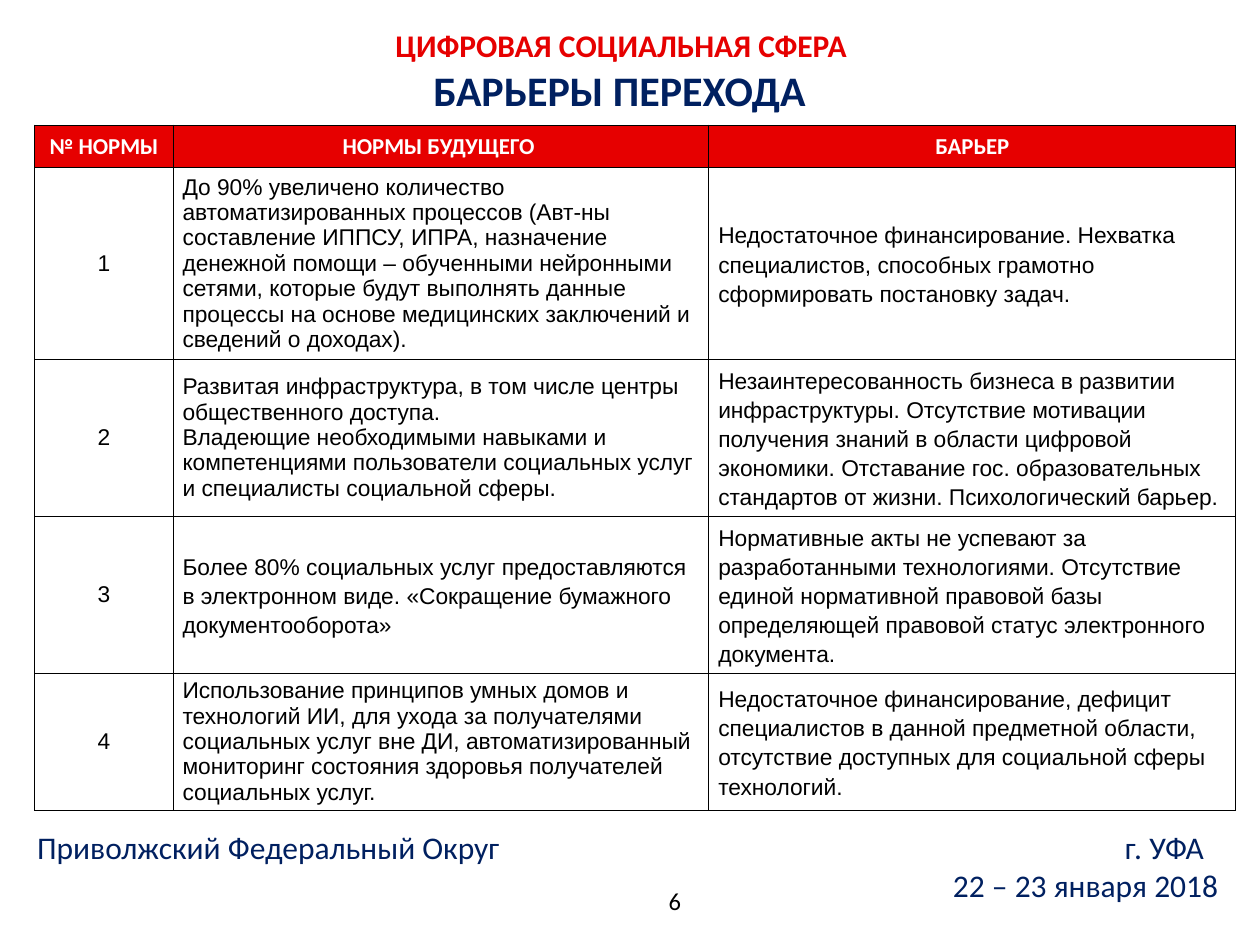
from pptx import Presentation
from pptx.dml.color import RGBColor
from pptx.enum import text
from pptx.oxml import parse_xml
from pptx.oxml.ns import nsdecls
from pptx.util import Cm, Pt

COLORS = {"navy": "002060", "red": "E60000", "white": "FFFFFF", "black": "000000"}
LEFT, CENTER, RIGHT = text.PP_ALIGN.LEFT, text.PP_ALIGN.CENTER, text.PP_ALIGN.RIGHT
MIDDLE, TOP = text.MSO_ANCHOR.MIDDLE, text.MSO_ANCHOR.TOP

HEADERS = ["№ НОРМЫ", "НОРМЫ БУДУЩЕГО ", "БАРЬЕР"]
# Each row: norm, its line spacing, barrier
NORMS = [
    ("До 90% увеличено количество автоматизированных процессов (Авт-ны составление ИППСУ, "
     "ИПРА, назначение денежной помощи – обученными нейронными сетями, которые будут выполнять "
     "данные процессы на основе медицинских заключений и сведений о доходах).", None,
     "Недостаточное финансирование. Нехватка специалистов, способных грамотно "
     "сформировать постановку задач."),
    ("Развитая инфраструктура, в том числе центры общественного доступа.\n"
     "Владеющие необходимыми навыками и компетенциями пользователи социальных услуг "
     "и специалисты социальной сферы.", None,
     "Незаинтересованность бизнеса в развитии инфраструктуры. Отсутствие мотивации получения "
     "знаний в области цифровой экономики. Отставание гос. образовательных стандартов от жизни. "
     "Психологический барьер."),
    ("Более 80% социальных услуг предоставляются в электронном виде. "
     "«Сокращение бумажного документооборота»", 1.15,
     "Нормативные акты не успевают за разработанными технологиями. Отсутствие единой "
     "нормативной правовой базы определяющей правовой статус электронного документа."),
    ("Использование принципов умных домов и технологий ИИ, для ухода за получателями социальных "
     "услуг вне ДИ, автоматизированный мониторинг состояния здоровья получателей "
     "социальных услуг.", None,
     "Недостаточное финансирование, дефицит специалистов в данной предметной области, "
     "отсутствие доступных для социальной сферы технологий."),
]
COL_WIDTHS = [2.79, 10.8, 10.62]
ROW_HEIGHTS = [0.86, 3.85, 3.16, 3.16, 2.76]


def format_text(tf, size, color, font="Calibri", bold=False, align=LEFT, spacing=None):
    for p in tf.paragraphs:
        p.alignment = align
        if spacing:
            p.line_spacing = spacing
        for r in p.runs:
            r.font.name = font
            r.font.size = Pt(size)
            r.font.bold = bold
            r.font.color.rgb = RGBColor.from_string(COLORS[color])


def add_text(s, box, content, anchor=MIDDLE, wrap=True):
    tf = s.shapes.add_textbox(*map(Cm, box)).text_frame
    tf.text = content
    tf.word_wrap = wrap
    tf.vertical_anchor = anchor
    return tf


def add_heading(s, x, y):
    """Place the red topic line and, below it, the slide title."""
    topic = add_text(s, (x, y, 9.8, 0.99), "ЦИФРОВАЯ СОЦИАЛЬНАЯ СФЕРА")
    format_text(topic, 18, "red", bold=True)

    title = s.shapes.title
    title.left, title.top, title.width, title.height = map(Cm, (x + 0.76, y + 0.76, 8.1, 1.27))
    tf = title.text_frame
    tf.text = "БАРЬЕРЫ ПЕРЕХОДА"
    tf.word_wrap = False
    tf.auto_size = text.MSO_AUTO_SIZE.NONE
    tf.vertical_anchor = TOP
    format_text(tf, 24, "navy", bold=True)


def add_borders(cell):
    tc_pr = cell._tc.get_or_add_tcPr()
    for i, side in enumerate(("lnL", "lnR", "lnT", "lnB")):
        tc_pr.insert(i, parse_xml(
            f'<a:{side} {nsdecls("a")} w="{Pt(0.5)}"><a:solidFill>'
            f'<a:srgbClr val="{COLORS["black"]}"/></a:solidFill></a:{side}>'))


def fill_cell(cell, content, fill, margin_y, **style):
    cell.text = content
    cell.vertical_anchor = MIDDLE
    cell.margin_left = cell.margin_right = Cm(0.19)
    cell.margin_top = cell.margin_bottom = Cm(margin_y)
    cell.fill.solid()
    cell.fill.fore_color.rgb = RGBColor.from_string(COLORS[fill])
    add_borders(cell)
    format_text(cell.text_frame, 13, **style)


def add_barriers_table(s, x, y):
    table = s.shapes.add_table(len(ROW_HEIGHTS), len(COL_WIDTHS), Cm(x), Cm(y),
                               Cm(sum(COL_WIDTHS)), Cm(sum(ROW_HEIGHTS))).table
    for column, width in zip(table.columns, COL_WIDTHS):
        column.width = Cm(width)
    for row, height in zip(table.rows, ROW_HEIGHTS):
        row.height = Cm(height)
    for i, header in enumerate(HEADERS):
        fill_cell(table.cell(0, i), header, "red", 0.1, color="white", bold=True, align=CENTER)
    body = {"color": "black", "font": "Arial"}
    for i, (norm, spacing, barrier) in enumerate(NORMS, start=1):
        fill_cell(table.cell(i, 0), str(i), "white", 0.1, align=CENTER, **body)
        fill_cell(table.cell(i, 1), norm, "white", 0, spacing=spacing, **body)
        fill_cell(table.cell(i, 2), barrier, "white", 0, spacing=1.15, **body)


def add_footer(s, x, y, w):
    """Place the district and city on one line, the dates and the page number below."""
    tf = add_text(s, (x, y, w, 1.5), "Приволжский Федеральный Округ\tг. УФА\n22 – 23 января 2018")
    tf.margin_left = Cm(0.5)
    format_text(tf, 18, "navy")
    place, dates = tf.paragraphs
    dates.alignment = RIGHT
    place._p.get_or_add_pPr().append(parse_xml(
        f'<a:tabLst {nsdecls("a")}><a:tab pos="{Cm(23.52)}" algn="r"/></a:tabLst>'))

    number = add_text(s, (x + 12.98, y + 0.94, 0.66, 1.02), "6", wrap=False)
    format_text(number, 14, "black", align=RIGHT)


def main():
    prs = Presentation()
    prs.slide_width, prs.slide_height = Cm(25.4), Cm(19.05)
    s = prs.slides.add_slide(prs.slide_layouts[5])
    add_heading(s, 7.72, 0.41)
    add_barriers_table(s, 0.7, 2.52)
    add_footer(s, 0.25, 16.71, 24.56)
    prs.save("out.pptx")


if __name__ == "__main__":
    main()
